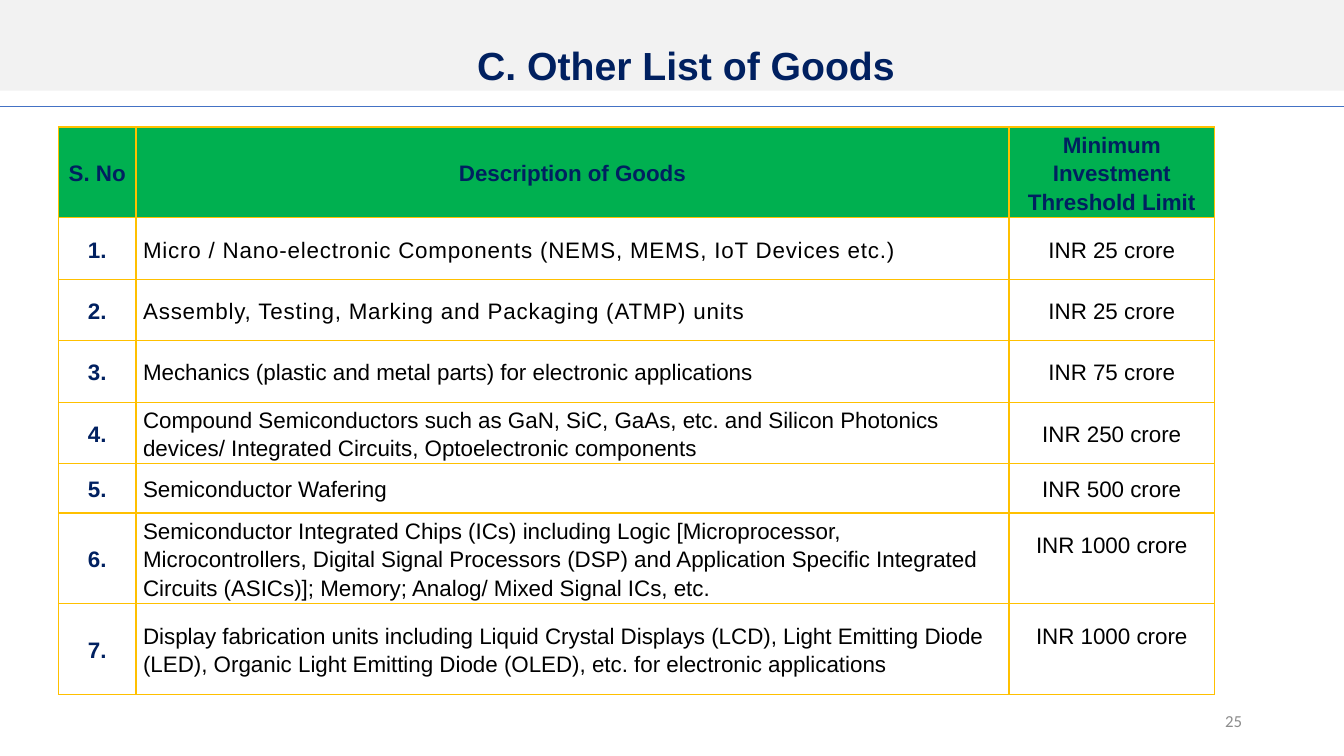
"""Build the slide listing other goods and their investment thresholds."""
from lxml.etree import SubElement
from pptx import Presentation
from pptx.dml.color import RGBColor
from pptx.enum.shapes import MSO_CONNECTOR, MSO_SHAPE
from pptx.enum.text import MSO_ANCHOR, PP_ALIGN
from pptx.oxml.ns import qn
from pptx.util import Inches, Pt

COLORS = {
    "band": "F2F2F2",
    "rule": "4472C4",
    "navy": "002060",
    "header": "00B050",
    "border": "FFC000",
    "text": "000000",
    "paper": "FFFFFF",
    "number": "8C8C8C",
}
GRID_COLUMNS, GRID_ROWS = 133.33, 75
TABLE_COLUMNS = [7.7, 86.6, 20.4]
TABLE_ROWS = [9, 6.1, 6.1, 6.1, 6.1, 4.9, 9, 9]
HEADINGS = ["S. No", "Description of Goods", "Minimum Investment Threshold Limit"]
GOODS = [
    ("Micro / Nano-electronic Components (NEMS, MEMS, IoT Devices etc.)", 25),
    ("Assembly, Testing, Marking and Packaging (ATMP) units", 25),
    ("Mechanics (plastic and metal parts) for electronic applications", 75),
    ("Compound Semiconductors such as GaN, SiC, GaAs, etc. and Silicon Photonics "
     "devices/ Integrated Circuits, Optoelectronic components", 250),
    ("Semiconductor Wafering", 500),
    ("Semiconductor Integrated Chips (ICs) including Logic [Microprocessor, "
     "Microcontrollers, Digital Signal Processors (DSP) and Application Specific "
     "Integrated Circuits (ASICs)]; Memory; Analog/ Mixed Signal ICs, etc.", 1000),
    ("Display fabrication units including Liquid Crystal Displays (LCD), Light "
     "Emitting Diode (LED), Organic Light Emitting Diode (OLED), etc. for "
     "electronic applications", 1000),
]
SPACED_GOODS = 2
RAISED_LIMIT = 1000


def grid(units):
    return Inches(units / 10)


def color(name):
    return RGBColor.from_string(COLORS[name])


def write(frame, text, size, ink, align, bold=False, font="Arial", leading=1.0):
    frame.text = text
    paragraph = frame.paragraphs[0]
    paragraph.alignment = align
    paragraph.line_spacing = leading
    span = paragraph.runs[0]
    span.font.name = font
    span.font.size = Pt(size)
    span.font.bold = bold
    span.font.color.rgb = color(ink)
    return span


def add_band(page):
    band = page.shapes.add_shape(
        MSO_SHAPE.RECTANGLE, 0, 0, grid(GRID_COLUMNS), grid(9))
    band.shadow.inherit = False
    band.fill.solid()
    band.fill.fore_color.rgb = color("band")
    band.line.fill.background()


def add_rule(page, row):
    rule = page.shapes.add_connector(
        MSO_CONNECTOR.STRAIGHT, 0, grid(row), grid(GRID_COLUMNS), grid(row))
    rule.line.color.rgb = color("rule")
    rule.line.width = Pt(0.5)
    SubElement(rule._element.spPr, qn("a:effectLst"))


def add_text(page, place, anchor, text, **style):
    box = page.shapes.add_textbox(*map(grid, place))
    frame = box.text_frame
    frame.word_wrap = True
    frame.vertical_anchor = anchor
    frame.margin_top = frame.margin_bottom = grid(0.4)
    write(frame, text, **style)
    return frame


def add_borders(cell):
    properties = cell._tc.get_or_add_tcPr()
    for position, side in enumerate(("lnL", "lnR", "lnT", "lnB")):
        line = SubElement(properties, qn(f"a:{side}"), w=str(Pt(1)))
        fill = SubElement(line, qn("a:solidFill"))
        SubElement(fill, qn("a:srgbClr"), val=COLORS["border"])
        properties.insert(position, line)


def fill_cell(cell, text, fill, ink, align, bold):
    cell.fill.solid()
    cell.fill.fore_color.rgb = color(fill)
    cell.vertical_anchor = MSO_ANCHOR.MIDDLE
    cell.margin_left = cell.margin_right = grid(0.7)
    cell.margin_top = cell.margin_bottom = 0
    add_borders(cell)
    return write(cell.text_frame, text, 16, ink, align, bold, leading=1.15)


def add_goods_table(page):
    table = page.shapes.add_table(
        len(TABLE_ROWS), len(TABLE_COLUMNS), grid(5.8), grid(12.6),
        grid(sum(TABLE_COLUMNS)), grid(sum(TABLE_ROWS))).table
    table.first_row = table.horz_banding = False
    for column, width in zip(table.columns, TABLE_COLUMNS):
        column.width = grid(width)
    for row, height in zip(table.rows, TABLE_ROWS):
        row.height = grid(height)

    for column, heading in enumerate(HEADINGS):
        fill_cell(table.cell(0, column), heading, "header", "navy",
                  PP_ALIGN.CENTER, True)
    for row, (goods, limit) in enumerate(GOODS, start=1):
        number, description, threshold = table.rows[row].cells
        fill_cell(number, f"{row}.", "paper", "navy", PP_ALIGN.CENTER, True)
        span = fill_cell(description, goods, "paper", "text", PP_ALIGN.LEFT, False)
        if row <= SPACED_GOODS:
            span.font._element.set("spc", "60")
        fill_cell(threshold, f"INR {limit} crore", "paper", "text",
                  PP_ALIGN.CENTER, False)
        if limit == RAISED_LIMIT:
            threshold.margin_bottom = grid(2.8)


def main():
    deck = Presentation()
    deck.slide_width, deck.slide_height = grid(GRID_COLUMNS), grid(GRID_ROWS)
    page = deck.slides.add_slide(deck.slide_layouts[6])
    add_band(page)
    add_rule(page, 10.6)
    add_goods_table(page)
    add_text(page, (94.2, 69.5, 30, 4), MSO_ANCHOR.MIDDLE, "25", size=12,
             ink="number", align=PP_ALIGN.RIGHT, font="Calibri")
    title = add_text(page, (5.5, 1.9, 125.1, 7.3), MSO_ANCHOR.BOTTOM,
                     "C. Other List of Goods", size=28, ink="navy",
                     align=PP_ALIGN.CENTER, bold=True, leading=0.9)
    title.margin_left = title.margin_right = grid(0.7)
    deck.save("out.pptx")


if __name__ == "__main__":
    main()
